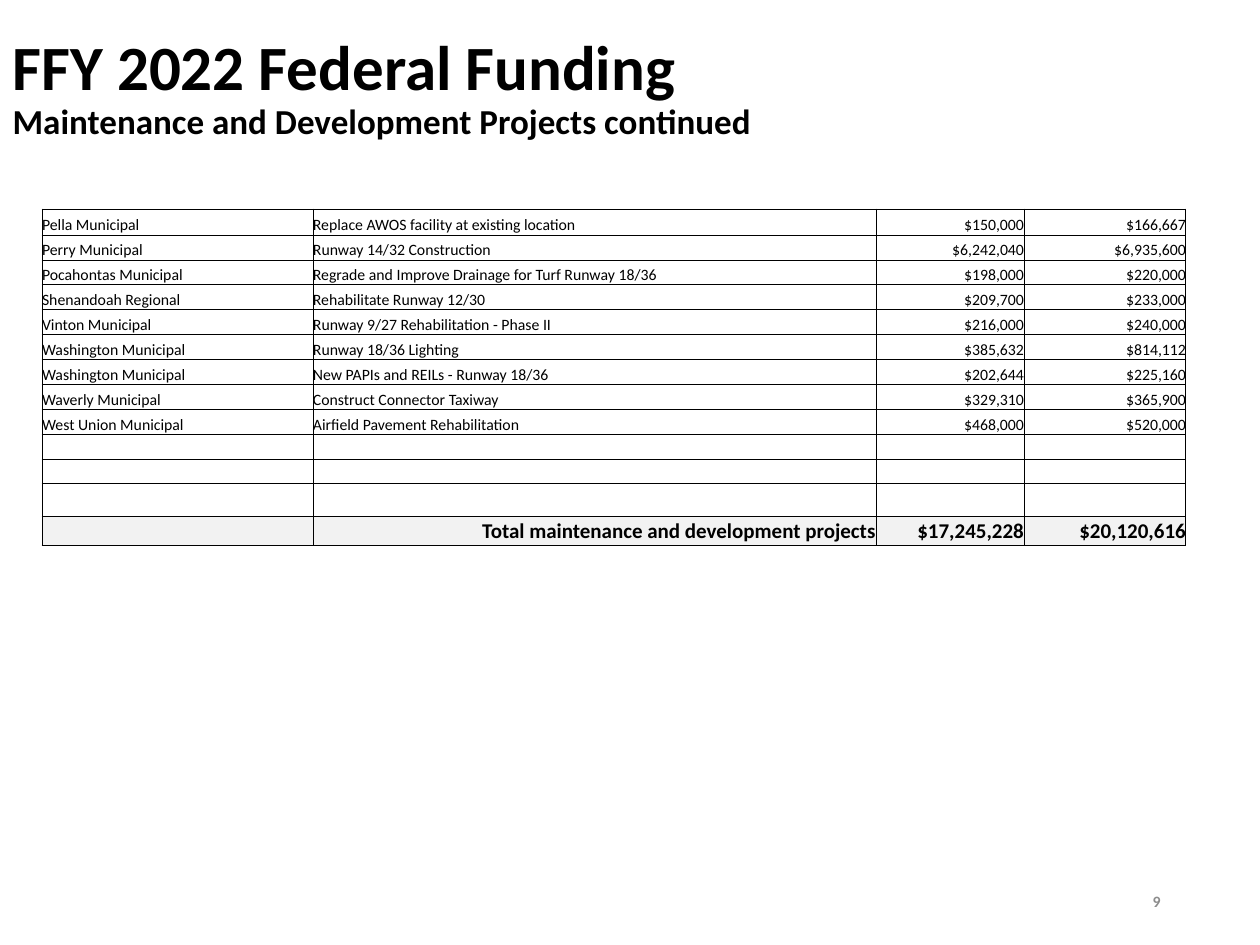
from copy import deepcopy

from lxml import etree
from pptx import Presentation
from pptx.dml.color import RGBColor
from pptx.enum.text import MSO_ANCHOR, MSO_AUTO_SIZE, PP_ALIGN
from pptx.oxml.ns import qn
from pptx.util import Pt

PX = 914400 // 126
FONT = "Calibri"
BLACK = RGBColor(0x00, 0x00, 0x00)
GRAY = RGBColor(0x8C, 0x8C, 0x8C)
WHITE = RGBColor(0xFF, 0xFF, 0xFF)
TOTAL_FILL = RGBColor(0xF2, 0xF2, 0xF2)
LEFT, RIGHT = PP_ALIGN.LEFT, PP_ALIGN.RIGHT
MIDDLE, BOTTOM = MSO_ANCHOR.MIDDLE, MSO_ANCHOR.BOTTOM

COLUMN_WIDTHS = [271, 563, 148, 162]
ROW_HEIGHTS = [26] + [25] * 9 + [24, 33, 29]
PROJECTS = [
    ("Pella Municipal", "Replace AWOS facility at existing location", "$150,000", "$166,667"),
    ("Perry Municipal", "Runway 14/32 Construction", "$6,242,040", "$6,935,600"),
    ("Pocahontas Municipal", "Regrade and Improve Drainage for Turf Runway 18/36", "$198,000", "$220,000"),
    ("Shenandoah Regional", "Rehabilitate Runway 12/30", "$209,700", "$233,000"),
    ("Vinton Municipal", "Runway 9/27 Rehabilitation - Phase II", "$216,000", "$240,000"),
    ("Washington Municipal", "Runway 18/36 Lighting", "$385,632", "$814,112"),
    ("Washington Municipal", "New PAPIs and REILs - Runway 18/36", "$202,644", "$225,160"),
    ("Waverly Municipal", "Construct Connector Taxiway", "$329,310", "$365,900"),
    ("West Union Municipal", "Airfield Pavement Rehabilitation", "$468,000", "$520,000"),
]
EMPTY_ROWS = [("", "", "", "")] * 3
TOTAL = ("", "Total maintenance and development projects", "$17,245,228", "$20,120,616")


def px(*lengths):
    return [length * PX for length in lengths]


def add_run(paragraph, text, size, color=BLACK, bold=False):
    run = paragraph.add_run()
    run.text = text
    run.font.name = FONT
    run.font.size = Pt(size)
    run.font.bold = bold
    run.font.color.rgb = color
    return run


def set_title(slide, heading, subheading):
    title = slide.shapes.title
    title.left, title.top, title.width, title.height = px(0, 21, 1218, 136)
    frame = title.text_frame
    frame.auto_size = MSO_AUTO_SIZE.NONE
    frame.vertical_anchor = MIDDLE
    paragraph = frame.paragraphs[0]
    paragraph.alignment = LEFT
    paragraph.line_spacing = 0.9
    run = add_run(paragraph, heading, 36, bold=True)
    # The line break takes the heading's size
    paragraph.add_line_break()
    line_break = paragraph._p.find(qn("a:br"))
    line_break.append(deepcopy(run._r.find(qn("a:rPr"))))
    add_run(paragraph, subheading, 20, bold=True)


def add_page_number(slide, number):
    frame = slide.shapes.add_textbox(*px(890, 876, 283, 50)).text_frame
    frame.word_wrap = True
    frame.vertical_anchor = MIDDLE
    paragraph = frame.paragraphs[0]
    paragraph.alignment = RIGHT
    add_run(paragraph, number, 9, GRAY, bold=True)


def add_borders(cell):
    properties = cell._tc.get_or_add_tcPr()
    for side in ("lnL", "lnR", "lnT", "lnB"):
        line = etree.SubElement(properties, qn(f"a:{side}"), w=str(Pt(0.5)))
        fill = etree.SubElement(line, qn("a:solidFill"))
        etree.SubElement(fill, qn("a:srgbClr"), val=str(BLACK))


def fill_cell(cell, text, alignment, is_total):
    cell.margin_left = cell.margin_right = cell.margin_top = cell.margin_bottom = 0
    cell.vertical_anchor = MIDDLE if is_total else BOTTOM
    add_borders(cell)
    cell.fill.solid()
    cell.fill.fore_color.rgb = TOTAL_FILL if is_total else WHITE
    paragraph = cell.text_frame.paragraphs[0]
    paragraph.alignment = alignment
    if text:
        add_run(paragraph, text, 12 if is_total else 9, bold=is_total)
    else:
        # Small end mark keeps an empty row at its set height
        end_mark = etree.SubElement(paragraph._p, qn("a:endParaRPr"))
        end_mark.set("sz", "900")


def add_project_table(slide):
    rows = PROJECTS + EMPTY_ROWS + [TOTAL]
    frame = slide.shapes.add_table(
        len(rows), len(COLUMN_WIDTHS),
        *px(42, 209, sum(COLUMN_WIDTHS), sum(ROW_HEIGHTS)))
    table = frame.table
    table.first_row = table.horz_banding = False
    for column, width in zip(table.columns, COLUMN_WIDTHS):
        column.width = width * PX
    for row, height in zip(table.rows, ROW_HEIGHTS):
        row.height = height * PX
    for row_index, values in enumerate(rows):
        is_total = values is TOTAL
        for column_index, text in enumerate(values):
            alignment = RIGHT if is_total or column_index >= 2 else LEFT
            fill_cell(table.cell(row_index, column_index), text, alignment, is_total)


def main():
    presentation = Presentation()
    presentation.slide_width, presentation.slide_height = px(1260, 945)
    slide = presentation.slides.add_slide(presentation.slide_layouts[5])
    set_title(slide, "FFY 2022 Federal Funding",
              "Maintenance and Development Projects continued")
    add_page_number(slide, "9")
    add_project_table(slide)
    presentation.save("out.pptx")


if __name__ == "__main__":
    main()
